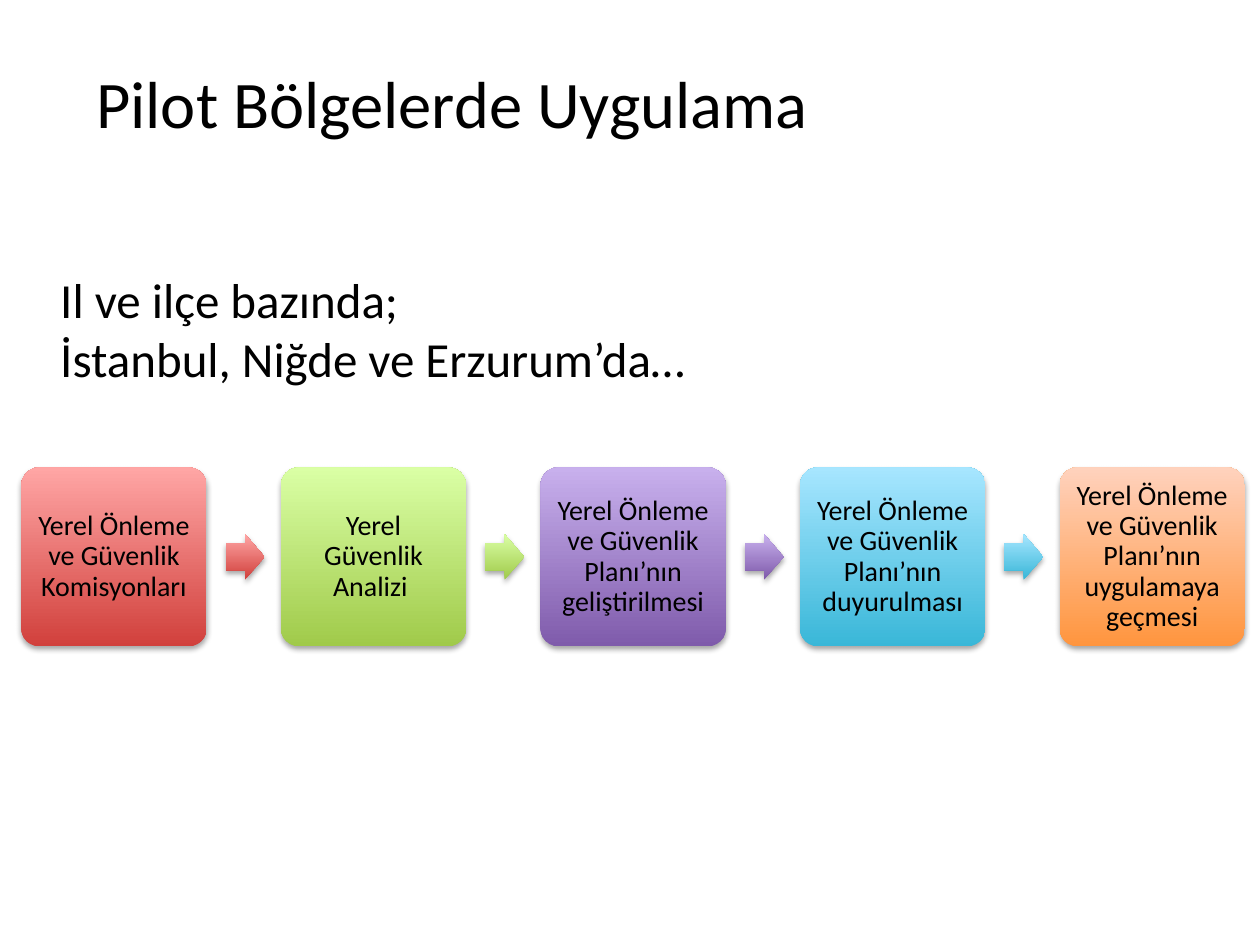
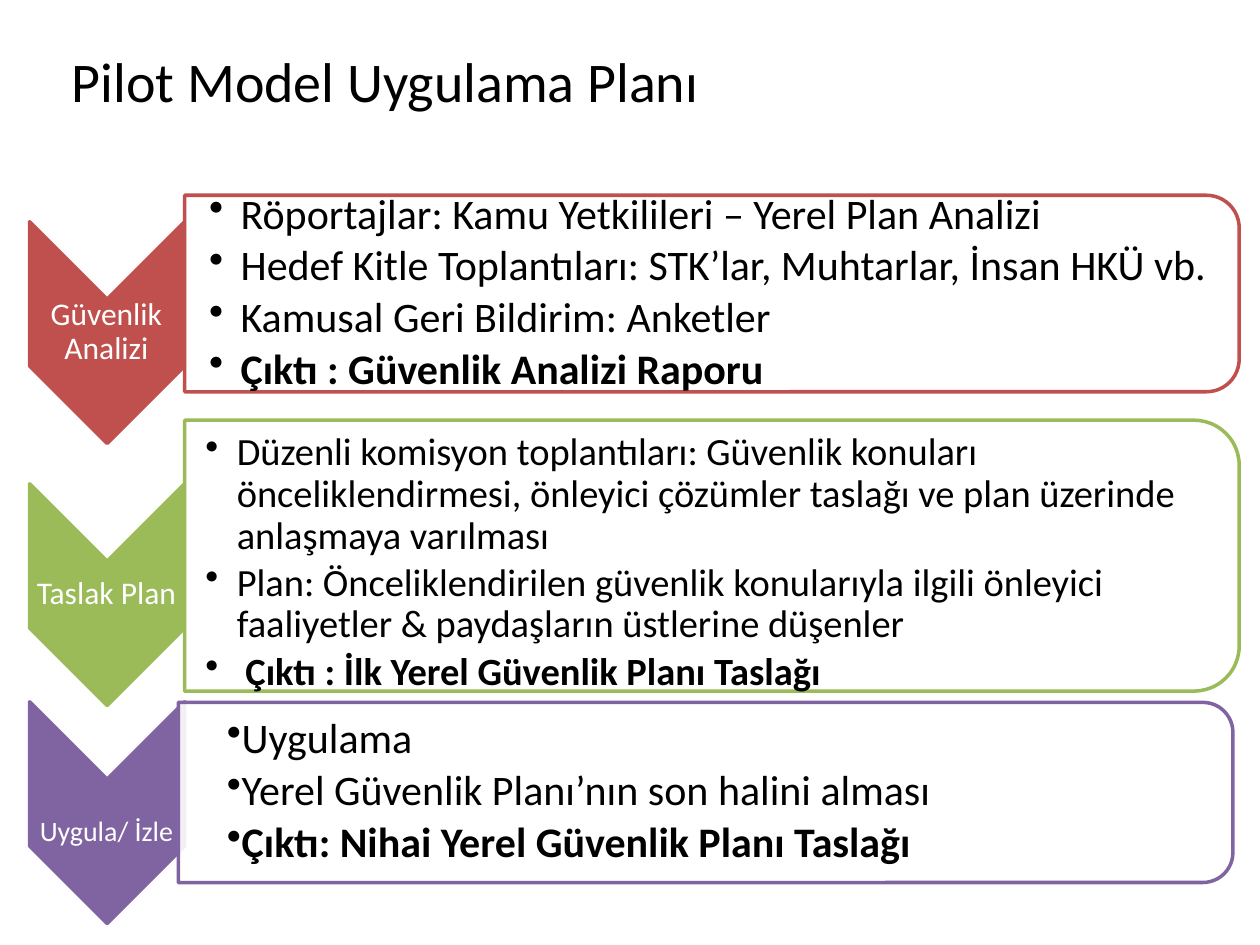
import pptx
import pptx.util
import pptx.dml.color
import pptx.enum.shapes
import pptx.enum.text
import pptx.oxml
import pptx.oxml.ns

Inches, Pt = pptx.util.Inches, pptx.util.Pt
RGB = pptx.dml.color.RGBColor.from_string
KIND = pptx.enum.shapes.MSO_SHAPE
ALIGN = pptx.enum.text.PP_ALIGN
ANCHOR = pptx.enum.text.MSO_ANCHOR
NS = pptx.oxml.ns.nsdecls("a")

# Theme: colours, font and type sizes
THEME = {
    "font": "Calibri", "ink": "000000", "paper": "FFFFFF",
    "head": 38, "plan": 32, "lead": 28, "step": 16,
    "fades": [("D1403C", "FFA6A5"), ("A0CA4A", "DAFFA5"), ("7F5BAB", "C8B0ED"),
              ("39B7D8", "A7E6FF"), ("FF953E", "FFD2BD")],
    "red": "C0504D", "green": "9BBB59", "violet": "8064A2",
}
SHADE = (f'<a:effectLst {NS}><a:outerShdw blurRad="39370" dist="22860" dir="5400000" '
         'rotWithShape="0"><a:srgbClr val="000000"><a:alpha val="35000"/></a:srgbClr>'
         '</a:outerShdw></a:effectLst>')


def write(shape, lines, size, color="ink", align=ALIGN.LEFT, anchor=ANCHOR.MIDDLE,
          inset=(0.1, 0.05, 0.1, 0.05), space=1.0, after=0, bullet=None):
    """Fill a shape with paragraphs; a bullet is (margin, indent), its last line bold."""
    frame = shape.text_frame
    left, top, right, low = map(Inches, inset)
    form = {"word_wrap": True, "vertical_anchor": anchor, "margin_left": left,
            "margin_top": top, "margin_right": right, "margin_bottom": low}
    for name, value in form.items():
        setattr(frame, name, value)
    for i, line in enumerate(lines):
        para = frame.paragraphs[0] if i == 0 else frame.add_paragraph()
        form = {"alignment": align, "line_spacing": space, "space_after": Pt(after)}
        for name, value in form.items():
            setattr(para, name, value)
        if bullet:
            para.level = 1
            props = para._p.get_or_add_pPr()
            props.set("marL", str(Inches(bullet[0])))
            props.set("indent", str(Inches(bullet[1])))
            props.append(pptx.oxml.parse_xml(f'<a:buChar {NS} char="•"/>'))
        run = para.add_run()
        run.text = line
        form = {"name": THEME["font"], "size": Pt(size),
                "bold": bool(bullet) and i == len(lines) - 1}
        for name, value in form.items():
            setattr(run.font, name, value)
        run.font.color.rgb = RGB(THEME[color])


deck = pptx.Presentation()
deck.slide_width, deck.slide_height = Inches(10), Inches(7.5)
blank = deck.slide_layouts[6]

# Slide 1: pilot regions
slide = deck.slides.add_slide(blank)
shapes = slide.shapes
title = shapes.add_textbox(*map(Inches, (0.34, 0.18, 6.5, 1.25)))
write(title, ["Pilot Bölgelerde Uygulama"], THEME["head"], align=ALIGN.CENTER)

# Chain of steps with an arrow between neighbours
steps = ["Yerel Önleme ve Güvenlik Komisyonları",
         "Yerel Güvenlik Analizi ",
         "Yerel Önleme ve Güvenlik Planı’nın geliştirilmesi",
         "Yerel Önleme ve Güvenlik Planı’nın duyurulması",
         "Yerel Önleme ve Güvenlik Planı’nın uygulamaya geçmesi"]
pitch = 2.06
for i, (step, fade) in enumerate(zip(steps, THEME["fades"])):
    box = shapes.add_shape(KIND.ROUNDED_RECTANGLE, Inches(0.17 + i * pitch), Inches(3.71),
                           Inches(1.47), Inches(1.42))
    box.adjustments[0] = 0.1
    write(box, [step], THEME["step"], align=ALIGN.CENTER, inset=(0.07,) * 4, space=0.9)
    parts = [box]
    if i < len(steps) - 1:
        arrow = shapes.add_shape(KIND.RIGHT_ARROW, Inches(1.79 + i * pitch), Inches(4.24),
                                 Inches(0.31), Inches(0.36))
        arrow.adjustments[0] = 0.6
        parts.append(arrow)
    for part in parts:
        part.fill.gradient()
        part.fill.gradient_angle = 90
        for stop, tone in zip(part.fill.gradient_stops, fade):
            stop.color.rgb = RGB(tone)
        part.line.fill.background()
        part._element.spPr.append(pptx.oxml.parse_xml(SHADE))

lead = shapes.add_textbox(*map(Inches, (0.38, 2.09, 6.16, 1.04)))
write(lead, ["Il ve ilçe bazında;", "İstanbul, Niğde ve Erzurum’da…"], THEME["lead"],
      anchor=ANCHOR.TOP)

# Slide 2: plan of the pilot model
slide = deck.slides.add_slide(blank)
shapes = slide.shapes
title = shapes.add_textbox(*map(Inches, (0.47, 0.16, 9, 0.95)))
write(title, ["Pilot Model Uygulama Planı"], THEME["plan"])

# Each phase: chevron centre, label centre and size, panel centre and height, text box
phases = [
    {"hue": "red", "label": "Güvenlik Analizi", "mid": 2.64, "tag": 2.64, "small": 18,
     "panel": (5.65, 2.33, 1.56), "body": (1.47, 1.62, 8.3, 1.41), "size": 24,
     "inset": (0.19, 0.02, 0.02, 0.02), "bullet": (0.25, -0.25),
     "lines": ["Röportajlar: Kamu Yetkilileri – Yerel Plan Analizi",
               "Hedef Kitle Toplantıları: STK’lar, Muhtarlar, İnsan HKÜ vb.",
               "Kamusal Geri Bildirim: Anketler",
               "Çıktı : Güvenlik Analizi Raporu"]},
    {"hue": "green", "label": "Taslak Plan", "mid": 4.72, "tag": 4.72, "small": 18,
     "panel": (5.65, 4.41, 2.15), "body": (1.47, 3.5, 8.27, 1.94), "size": 22,
     "inset": (0.16, 0.01, 0.01, 0.01), "bullet": (0.25, -0.25),
     "lines": ["Düzenli komisyon toplantıları: Güvenlik konuları önceliklendirmesi, "
               "önleyici çözümler taslağı ve plan üzerinde anlaşmaya varılması",
               "Plan: Önceliklendirilen güvenlik konularıyla ilgili önleyici "
               "faaliyetler & paydaşların üstlerine düşenler",
               " Çıktı : İlk Yerel Güvenlik Planı Taslağı"]},
    {"hue": "violet", "label": "Uygula/ İzle", "mid": 6.45, "tag": 6.61, "small": 16,
     "panel": (5.6, 6.29, 1.43), "body": (1.42, 5.64, 8.31, 1.29), "size": 24,
     "inset": (0.19, 0.02, 0.02, 0.02), "bullet": (0.19, 0),
     "lines": ["Uygulama",
               "Yerel Güvenlik Planı’nın son halini alması",
               "Çıktı: Nihai Yerel Güvenlik Planı Taslağı"]},
]
wide, tall, span = 1.76, 1.23, 8.37
for phase in phases:
    hue = RGB(THEME[phase["hue"]])
    across, down, high = phase["panel"]

    # Chevron and its label
    sign = shapes.add_shape(KIND.CHEVRON, Inches(0.85 - wide / 2),
                            Inches(phase["mid"] - tall / 2), Inches(wide), Inches(tall))
    sign.fill.solid()
    sign.fill.fore_color.rgb = hue
    tag = shapes.add_textbox(Inches(0.23), Inches(phase["tag"] - 0.27),
                             Inches(tall), Inches(0.53))
    write(tag, [phase["label"]], phase["small"], "paper", ALIGN.CENTER,
          inset=(0.01,) * 4, space=0.9)

    # Panel, slightly see-through, and its bullets
    panel = shapes.add_shape(KIND.ROUND_2_SAME_RECTANGLE, Inches(across - high / 2),
                             Inches(down - span / 2), Inches(high), Inches(span))
    panel.fill.solid()
    panel.fill.fore_color.rgb = RGB(THEME["paper"])
    tone = panel._element.spPr.find(".//" + pptx.oxml.ns.qn("a:srgbClr"))
    tone.append(pptx.oxml.parse_xml(f'<a:alpha {NS} val="90000"/>'))
    for part in (sign, panel):
        part.rotation = 90
        part.line.color.rgb = hue
        part.line.width = Pt(2)
        part.shadow.inherit = False
    body = shapes.add_textbox(*map(Inches, phase["body"]))
    write(body, phase["lines"], phase["size"], inset=phase["inset"], space=0.9,
          after=0.15 * phase["size"], bullet=phase["bullet"])

deck.save("out.pptx")
